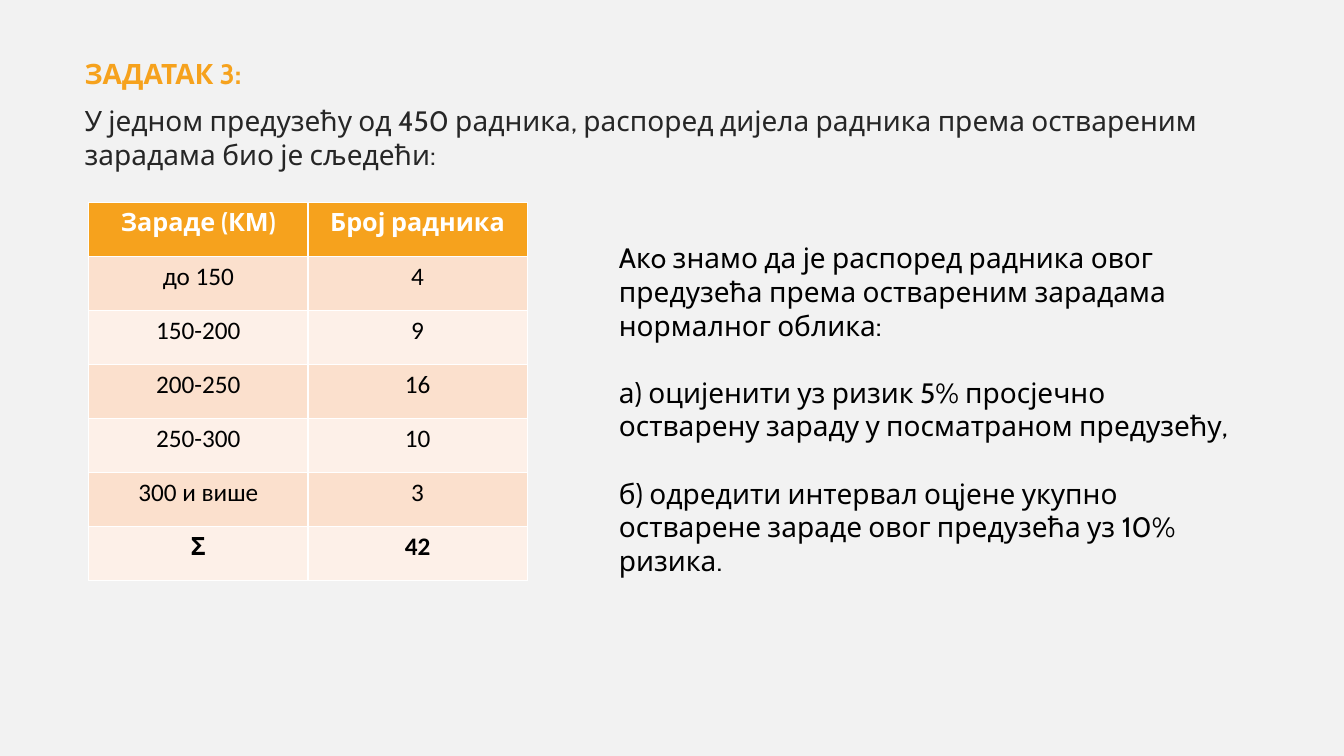
from dataclasses import dataclass

import pptx
import pptx.dml.color
import pptx.enum.text
import pptx.util

Inches = pptx.util.Inches
RGB = pptx.dml.color.RGBColor.from_string


@dataclass(frozen=True)
class Theme:
    background: str = "F2F2F2"
    accent: str = "F6A21D"
    intro: str = "262626"
    text: str = "000000"
    header_text: str = "FFFFFF"
    bands: tuple = ("FBE0CD", "FDF0E8")
    font: str = "Cabin"
    number_font: str = "Calibri"
    body_size: int = 20
    table_size: int = 18


THEME = Theme()

WAGES = [
    ("Зараде (КМ)", "Број радника"),
    ("до 150", "4"),
    ("150-200", "9"),
    ("200-250", "16"),
    ("250-300", "10"),
    ("300 и више", "3"),
    ("Σ", "42"),
]
TASK = [
    ("ЗАДАТАК 3:", THEME.accent, True),
    ("У једном предузећу од 450 радника, распоред дијела радника "
     "према оствареним зарадама био је сљедећи:", THEME.intro, False),
]
QUESTIONS = [
    ("Aкo знамо да је распоред радника овог предузећа према "
     "оствареним зарадама нормалног облика:", THEME.text, False),
    ("а) оцијенити уз ризик 5% просјечно остварену зараду у "
     "посматраном предузећу,", THEME.text, False),
    ("б) одредити интервал оцјене укупно остварене зараде овог "
     "предузећа уз 10% ризика.", THEME.text, False),
]


def style_paragraph(p, size, color, bold, font=THEME.font):
    for r in p.runs:
        r.font.name = font
        r.font.size = pptx.util.Pt(size)
        r.font.bold = bold
        r.font.color.rgb = RGB(color)


def add_text(slide, left, top, width, height, paragraphs, gap):
    """Place (text, colour, bold) paragraphs, gap points apart."""
    sp = slide.shapes.add_textbox(
        Inches(left), Inches(top), Inches(width), Inches(height))
    tf = sp.text_frame
    tf.word_wrap = True
    for i, (text, color, bold) in enumerate(paragraphs):
        p = tf.add_paragraph() if i else tf.paragraphs[0]
        p.text = text
        if i:
            p.space_before = pptx.util.Pt(gap)
        style_paragraph(p, THEME.body_size, color, bold)


def add_wage_table(slide, left, top, width, height):
    table = slide.shapes.add_table(
        len(WAGES), len(WAGES[0]), Inches(left), Inches(top),
        Inches(width), Inches(height)).table
    for i, row in enumerate(WAGES):
        header, total = i == 0, i == len(WAGES) - 1
        for j, text in enumerate(row):
            cell = table.cell(i, j)
            cell.fill.solid()
            cell.fill.fore_color.rgb = RGB(
                THEME.accent if header else THEME.bands[(i - 1) % 2])
            cell.text_frame.text = text
            p = cell.text_frame.paragraphs[0]
            p.alignment = pptx.enum.text.PP_ALIGN.CENTER
            sigma = total and j == 0
            style_paragraph(
                p, THEME.table_size,
                THEME.header_text if header else THEME.text,
                header or total,
                THEME.font if header or sigma else THEME.number_font)


def main():
    prs = pptx.Presentation()
    prs.slide_width, prs.slide_height = Inches(13.33), Inches(7.5)
    slide = prs.slides.add_slide(prs.slide_layouts[6])
    slide.background.fill.solid()
    slide.background.fill.fore_color.rgb = RGB(THEME.background)
    add_text(slide, 0.74, 0.51, 12.05, 6.49, TASK, gap=10)
    add_wage_table(slide, 0.88, 2.01, 4.35, 3.75)
    add_text(slide, 6.04, 2.34, 6.42, 3.1, QUESTIONS, gap=24)
    prs.save("out.pptx")


if __name__ == "__main__":
    main()
